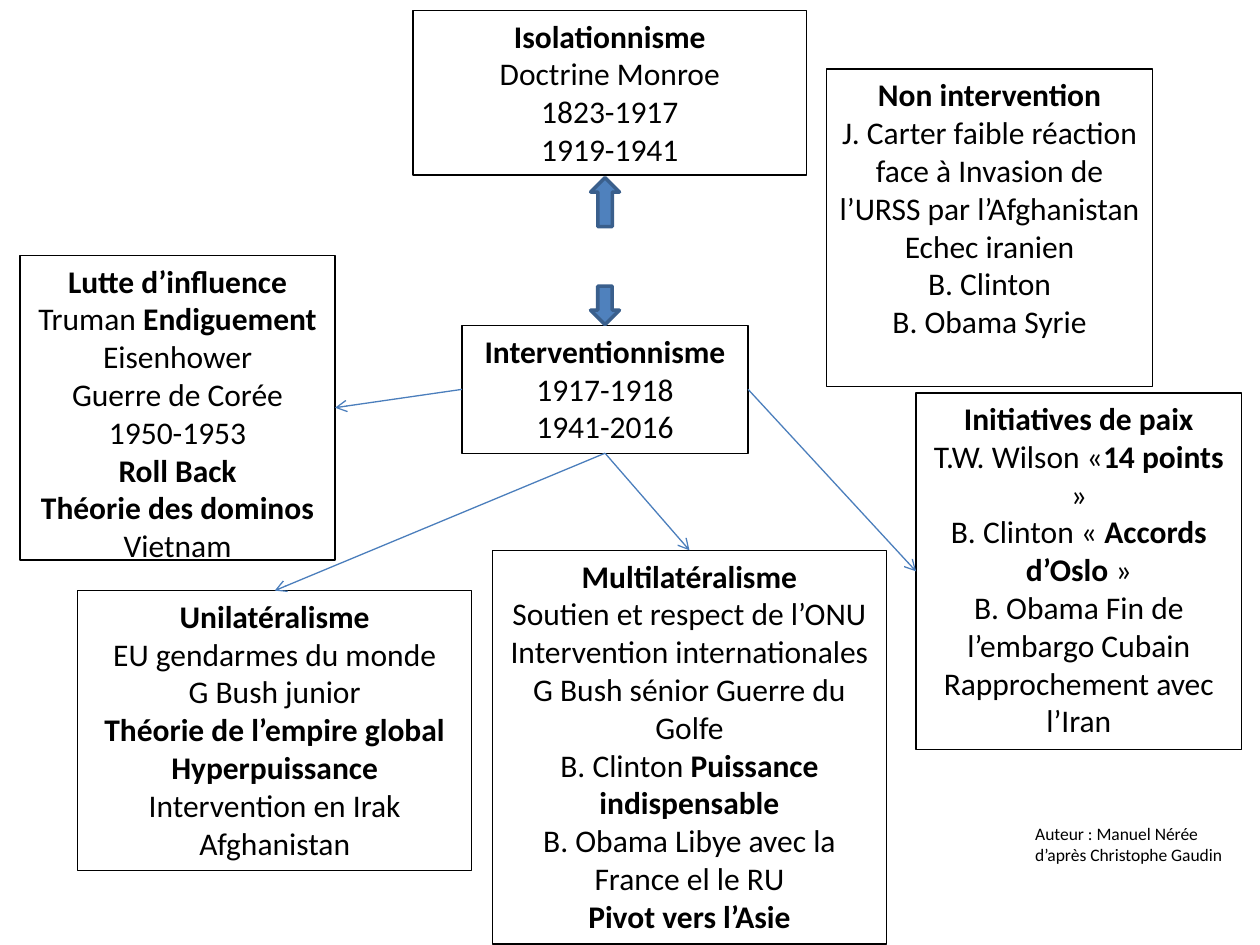
from pptx import Presentation
from pptx.dml.color import RGBColor
from pptx.enum.shapes import MSO_CONNECTOR, MSO_SHAPE
from pptx.enum.text import PP_ALIGN
from pptx.oxml.ns import qn
from pptx.util import Pt
from lxml import etree

CENTER, LEFT = PP_ALIGN.CENTER, PP_ALIGN.LEFT
DOWN, STRAIGHT = MSO_SHAPE.DOWN_ARROW, MSO_CONNECTOR.STRAIGHT
FONT = "Calibri"
TOP_SIDE, LEFT_SIDE, BOTTOM_SIDE, RIGHT_SIDE = range(4)

# Text between asterisks is bold.
BOXES = {
    "isolation": ((236, 6, 225, 94), [
        "*Isolationnisme*", "Doctrine Monroe", "1823-1917", "1919-1941"]),
    "action": ((264, 186, 163.5, 73), [
        "*Interventionnisme*", "1917-1918", "1941-2016"]),
    "peace": ((523.5, 224.5, 186, 204), [
        "*Initiatives de paix*", "T.W. Wilson «*14 points *»",
        "B. Clinton « *Accords d’Oslo* »",
        "B. Obama Fin de l’embargo Cubain",
        "Rapprochement avec l’Iran"]),
    "multi": ((281.5, 314.5, 225, 225), [
        "*Multilatéralisme*", "Soutien et respect de l’ONU",
        "Intervention internationales", "G Bush sénior Guerre du Golfe",
        "B. Clinton *Puissance indispensable*",
        "B. Obama Libye avec la France el le RU",
        "*Pivot vers l’Asie*"]),
    "uni": ((44.5, 337.5, 225, 160), [
        "*Unilatéralisme*", "EU gendarmes du monde", "G Bush junior",
        "*Théorie de l’empire global*", "*Hyperpuissance*",
        "Intervention en Irak", "Afghanistan"]),
    "influence": ((11.5, 146, 180, 174), [
        "*Lutte d’influence*", "Truman *Endiguement*", "Eisenhower",
        "Guerre de Corée", "1950-1953", "*Roll Back*",
        "*Théorie des dominos*", "Vietnam"]),
    "retreat": ((472.5, 39.5, 186, 181.5), [
        "*Non intervention*",
        "J. Carter faible réaction face à Invasion de l’URSS par l’Afghanistan",
        "Echec iranien", "B. Clinton", "B. Obama Syrie"]),
}
ARROWS = [((337.5, 163.5, 16.5, 22), 0), ((337.5, 101.5, 16.5, 28), 180)]
LINKS = [
    (LEFT_SIDE, "influence", RIGHT_SIDE),
    (BOTTOM_SIDE, "uni", TOP_SIDE),
    (BOTTOM_SIDE, "multi", TOP_SIDE),
    (RIGHT_SIDE, "peace", LEFT_SIDE),
]
CREDIT = ((584.5, 466.5, 135.5, 31.5),
          ["Auteur : Manuel Nérée d’après Christophe Gaudin"])


def color(code):
    return RGBColor.from_string(code)


def outline(shape, code, width):
    shape.line.color.rgb = color(code)
    shape.line.width = Pt(width)


def add_text(slide, place, rows, size, align):
    box = slide.shapes.add_textbox(*map(Pt, place))
    frame = box.text_frame
    frame.word_wrap = True
    for i, row in enumerate(rows):
        para = frame.add_paragraph() if i else frame.paragraphs[0]
        para.alignment = align
        for j, part in enumerate(row.split("*")):
            if part:
                run = para.add_run()
                run.text = part
                run.font.name = FONT
                run.font.size = Pt(size)
                run.font.bold = j % 2 == 1
                run.font.color.rgb = color("000000")
    return box


def add_arrow(slide, place, turn):
    arrow = slide.shapes.add_shape(DOWN, *map(Pt, place))
    arrow.rotation = turn
    arrow.shadow.inherit = False
    arrow.fill.solid()
    arrow.fill.fore_color.rgb = color("4F81BD")
    outline(arrow, "3A5F8C", 2)


def add_link(slide, start, side, end, goal):
    link = slide.shapes.add_connector(STRAIGHT, 0, 0, 0, 0)
    link.begin_connect(start, side)
    link.end_connect(end, goal)
    outline(link, "4B7EBC", 0.75)
    props = link._element.spPr
    etree.SubElement(props.find(qn("a:ln")), qn("a:tailEnd"), type="arrow")
    etree.SubElement(props, qn("a:effectLst"))


def main():
    deck = Presentation()
    deck.slide_width, deck.slide_height = Pt(720), Pt(540)
    slide = deck.slides.add_slide(deck.slide_layouts[6])
    boxes = {}
    for name, (place, rows) in BOXES.items():
        boxes[name] = add_text(slide, place, rows, 18, CENTER)
        outline(boxes[name], "000000", 0.75)
    for place, turn in ARROWS:
        add_arrow(slide, place, turn)
    for side, name, goal in LINKS:
        add_link(slide, boxes["action"], side, boxes[name], goal)
    add_text(slide, *CREDIT, 10, LEFT)
    deck.save("out.pptx")


if __name__ == "__main__":
    main()
